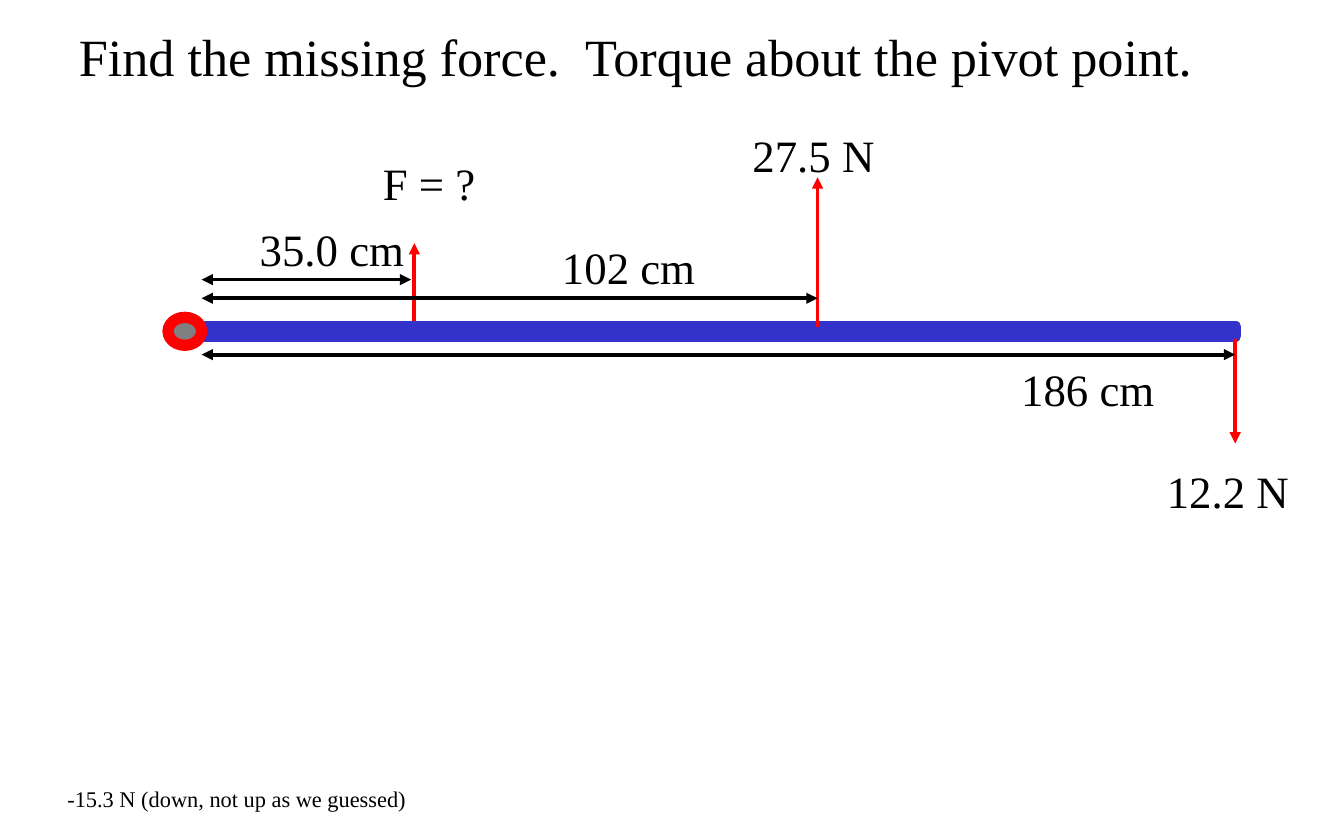
from dataclasses import dataclass

from pptx import Presentation
from pptx.dml.color import RGBColor as RGB
from pptx.enum.shapes import MSO_CONNECTOR as LINK, MSO_SHAPE as SHAPE
from pptx.enum.text import MSO_ANCHOR as ANCHOR, MSO_AUTO_SIZE as FIT, PP_ALIGN as ALIGN
from pptx.oxml.ns import qn
from pptx.util import Pt


@dataclass(frozen=True)
class Theme:
    face: str = "Times New Roman"
    ink: RGB = RGB(0, 0, 0)
    force: RGB = RGB(0xFF, 0, 0)
    beam: RGB = RGB(0x33, 0x33, 0xCC)
    core: RGB = RGB(0x80, 0x80, 0x80)
    title: int = 28
    label: int = 24
    note: int = 12
    thick: int = 6
    thin: int = 2


THEME = Theme()

# Places are in points, from the left end of the spans and the top of the beam.
# x, tail y, tip y, label, label x, label y, label width
FORCES = [
    (114, -3, -44.7, "F = ?", 90, -95, 65),
    (330, 0, -80, "27.5 N", 288, -110, 81),
    (553.7, 6.4, 62.6, "12.2 N", 510, 70, 81),
]
# length, y, label, label x, label y, label width
SPANS = [
    (112.3, -25.2, "35.0 cm", 24, -60, 93),
    (330, -15.2, "102 cm", 186, -50, 86),
    (553.7, 15, "186 cm", 432, 15, 86),
]


def place(shape, box):
    for name, size in zip(("left", "top", "width", "height"), box):
        setattr(shape, name, Pt(size))


def write(shape, text, size):
    frame = shape.text_frame
    look = {"word_wrap": False, "auto_size": FIT.SHAPE_TO_FIT_TEXT,
            "vertical_anchor": ANCHOR.TOP}
    for name, value in look.items():
        setattr(frame, name, value)
    frame.text = text
    par = frame.paragraphs[0]
    par.alignment = ALIGN.LEFT
    font = par.runs[0].font
    for name, value in {"name": THEME.face, "size": Pt(size)}.items():
        setattr(font, name, value)
    font.color.rgb = THEME.ink


def add_text(slide, box, text, size):
    write(slide.shapes.add_textbox(*map(Pt, box)), text, size)


def add_solid(slide, kind, box, edge):
    shape = slide.shapes.add_shape(kind, *map(Pt, box))
    shape.shadow.inherit = False
    shape.fill.solid()
    shape.fill.fore_color.rgb = THEME.core
    shape.line.color.rgb = edge
    shape.line.width = Pt(THEME.thick)


def add_arrow(slide, start, end, color, tips=("tailEnd",)):
    link = slide.shapes.add_connector(LINK.STRAIGHT, *map(Pt, (*start, *end)))
    link.line.color.rgb = color
    link.line.width = Pt(THEME.thin)
    props = link._element.spPr
    edge = props.find(qn("a:ln"))
    for tip in tips:
        edge.append(edge.makeelement(qn(f"a:{tip}"), {"type": "triangle"}))
    props.append(props.makeelement(qn("a:effectLst"), {}))


def draw_title(slide, box):
    title = slide.shapes.title
    place(title, box)
    write(title, "Find the missing force.  Torque about the pivot point.", THEME.title)


def draw_lever(slide, box):
    left, top, width, height = box
    add_solid(slide, SHAPE.RECTANGLE, (left + 2, top, width - 2, height), THEME.beam)
    add_solid(slide, SHAPE.OVAL, (left - 18, top - 5, 18, 15), THEME.force)
    for x, tail, tip, text, dx, dy, wide in FORCES:
        add_arrow(slide, (left + x, top + tail), (left + x, top + tip), THEME.force)
        add_text(slide, (left + dx, top + dy, wide, 36), text, THEME.label)
    for size, y, text, dx, dy, wide in SPANS:
        add_arrow(slide, (left, top + y), (left + size, top + y), THEME.ink,
                  ("headEnd", "tailEnd"))
        add_text(slide, (left + dx, top + dy, wide, 36), text, THEME.label)


def draw_answer(slide, box):
    add_text(slide, box, "-15.3 N (down, not up as we guessed)", THEME.note)


def main():
    deck = Presentation()
    deck.slide_width, deck.slide_height = Pt(720), Pt(450)
    slide = deck.slides.add_slide(deck.slide_layouts[5])
    draw_title(slide, (35, 9.5, 617, 41))
    draw_lever(slide, (108, 175, 554, 5))
    draw_answer(slide, (29, 417, 198, 22))
    deck.save("out.pptx")


if __name__ == "__main__":
    main()
